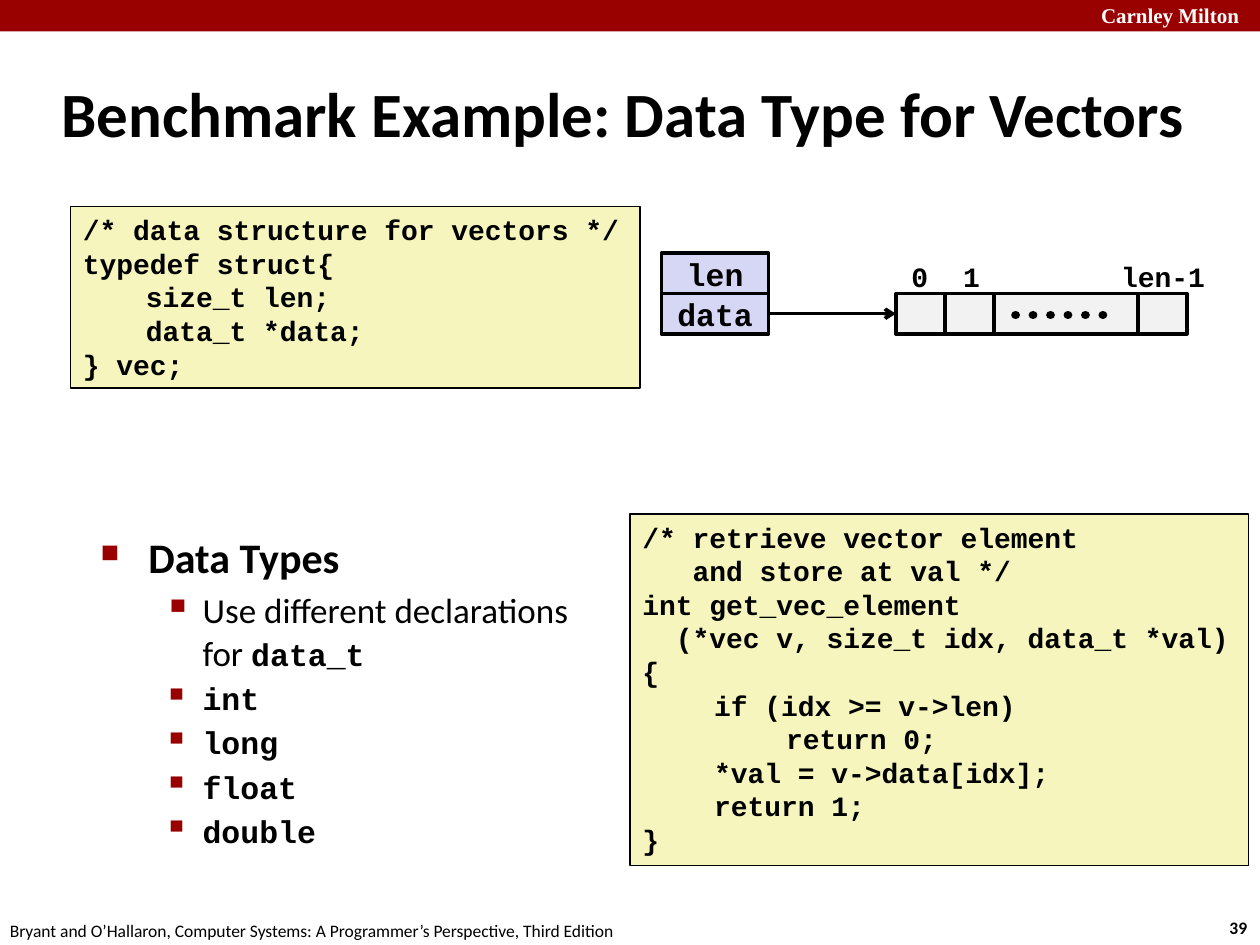
"""Build the slide on the vector data type of the benchmark example."""
from lxml import etree
from pptx import Presentation
from pptx import util as u
from pptx.dml.color import RGBColor
from pptx.enum import dml, shapes, text
from pptx.oxml.ns import qn

RED = RGBColor(0x99, 0x00, 0x00)
BLACK = RGBColor(0x00, 0x00, 0x00)
WHITE = RGBColor(0xFF, 0xFF, 0xFF)
CREAM = RGBColor(0xF6, 0xF5, 0xBD)
LILAC = RGBColor(0xD6, 0xD6, 0xF5)
GRAY = RGBColor(0xF2, 0xF2, 0xF2)
SANS, MONO, SERIF = "Calibri", "Courier New", "Times New Roman"
CENTER = text.PP_ALIGN.CENTER
MIDDLE = text.MSO_ANCHOR.MIDDLE

CELL_TOP, CELL_HEIGHT = 2.33, 0.32

STRUCT_CODE = """/* data structure for vectors */
typedef struct{
\tsize_t len;
\tdata_t *data;
} vec;"""

GETTER_CODE = """/* retrieve vector element
   and store at val */
int get_vec_element
  (*vec v, size_t idx, data_t *val)
{
\tif (idx >= v->len)
\t\treturn 0;
\t*val = v->data[idx];
\treturn 1;
}"""


def add_span(para, words, size, font=SANS, color=BLACK, bold=False):
    span = para.add_run()
    span.text = words
    span.font.size = u.Pt(size)
    span.font.name = font
    span.font.color.rgb = color
    span.font.bold = bold


def write(box, words, align=text.PP_ALIGN.LEFT, anchor=text.MSO_ANCHOR.TOP, **style):
    frame = box.text_frame
    frame.word_wrap = True
    frame.vertical_anchor = anchor
    for index, line in enumerate(words.split("\n")):
        para = frame.add_paragraph() if index else frame.paragraphs[0]
        para.alignment = align
        add_span(para, line, **style)


def add_label(page, words, left, top, width, height, **style):
    box = page.shapes.add_textbox(*map(u.Inches, (left, top, width, height)))
    write(box, words, **style)


def add_rect(page, left, top, width, height, fill, line=None):
    rect = page.shapes.add_shape(
        shapes.MSO_SHAPE.RECTANGLE, *map(u.Inches, (left, top, width, height)))
    rect.shadow.inherit = False
    rect.fill.solid()
    rect.fill.fore_color.rgb = fill
    if line:
        rect.line.color.rgb = BLACK
        rect.line.width = u.Pt(line)
    else:
        rect.line.fill.background()
    return rect


def add_code(page, code, left, top, width, height, tab):
    box = add_rect(page, left, top, width, height, CREAM, 1)
    write(box, code, size=16, font=MONO, bold=True)
    for para in box.text_frame.paragraphs:
        stops = etree.SubElement(para._p.get_or_add_pPr(), qn("a:tabLst"))
        for count in (1, 2):
            etree.SubElement(stops, qn("a:tab"), pos=str(u.Inches(tab * count)), algn="l")


def add_line(page, start, end, width):
    line = page.shapes.add_connector(
        shapes.MSO_CONNECTOR.STRAIGHT, *map(u.Inches, (*start, *end)))
    line.line.color.rgb = BLACK
    line.line.width = u.Pt(width)
    etree.SubElement(line._element.spPr, qn("a:effectLst"))
    return line


def add_arrow(page, source, target):
    arrow = add_line(page, (6.1, 2.49), (7.11, 2.49), 2)
    arrow.begin_connect(source, 3)
    arrow.end_connect(target, 1)
    etree.SubElement(arrow.line._get_or_add_ln(), qn("a:tailEnd"), type="arrow")


def add_dots(page, start, end):
    dots = add_line(page, start, end, 5)
    dots.line.dash_style = dml.MSO_LINE.ROUND_DOT
    dots.line._get_or_add_ln().set("cap", "rnd")


def add_bullet(para, mark, percent, margin, hang):
    props = para._p.get_or_add_pPr()
    props.set("marL", str(u.Inches(margin)))
    props.set("indent", str(u.Inches(-hang)))
    before = etree.SubElement(props, qn("a:spcBef"))
    etree.SubElement(before, qn("a:spcPct"), val="20000")
    color = etree.SubElement(props, qn("a:buClr"))
    etree.SubElement(color, qn("a:srgbClr"), val=str(RED))
    etree.SubElement(props, qn("a:buSzPct"), val=str(percent * 1000))
    etree.SubElement(props, qn("a:buChar"), char=mark)


def add_type_list(page):
    box = page.shapes.add_textbox(*map(u.Inches, (0.7, 4.17, 4.23, 2.43)))
    frame = box.text_frame
    frame.word_wrap = True
    heading = frame.paragraphs[0]
    add_bullet(heading, "■", 60, 0.38, 0.38)
    add_span(heading, "Data Types", 24, bold=True)
    items = [("Use different declarations for ", "data_t")]
    items += [("", name) for name in ("int", "long", "float", "double")]
    for lead, name in items:
        para = frame.add_paragraph()
        para.level = 1
        add_bullet(para, "▪", 110, 0.81, 0.31)
        if lead:
            add_span(para, lead, 20)
        add_span(para, name, 18, font=MONO, bold=True)


def add_vector(page):
    fields = []
    for row, name in enumerate(("len", "data")):
        top = CELL_TOP + (row - 1) * CELL_HEIGHT
        field = add_rect(page, 5.25, top, 0.85, CELL_HEIGHT, LILAC, 2)
        write(field, name, align=CENTER, anchor=MIDDLE, size=18, font=MONO, bold=True)
        fields.append(field)
    left, cells = 7.11, []
    for width in (0.39, 0.39, 1.14, 0.39):
        cells.append(add_rect(page, left, CELL_TOP, width, CELL_HEIGHT, GRAY, 2))
        left += width
    add_arrow(page, fields[1], cells[0])
    for name, left, width in (("0", 7.13, 0.34), ("1", 7.54, 0.34), ("len-1", 8.79, 0.88)):
        add_label(page, name, left, 2.01, width, 0.37,
                  align=CENTER, size=16, font=MONO, bold=True)
    add_dots(page, (8.06, 2.5), (8.86, 2.5))


def add_frame(page):
    add_rect(page, 0, 0, 10, 0.25, RED)
    add_label(page, "Carnley Milton", 8.64, -0.03, 1.43, 0.3,
              size=12, font=SERIF, color=WHITE, bold=True)
    add_label(page, "39", 9.66, 7.23, 0.37, 0.27, size=10, bold=True)
    add_label(page, "Bryant and O’Hallaron, Computer Systems: "
              "A Programmer’s Perspective, Third Edition", -0.02, 7.25, 5.08, 0.27, size=10)


def main():
    deck = Presentation()
    deck.slide_width, deck.slide_height = u.Inches(10), u.Inches(7.5)
    page = deck.slides.add_slide(deck.slide_layouts[6])
    add_frame(page)
    add_label(page, "Benchmark Example: Data Type for Vectors", 0.39, 0.48, 9.44, 0.83,
              anchor=MIDDLE, size=36, bold=True)
    add_code(page, STRUCT_CODE, 0.56, 1.64, 4.52, 1.44, tab=0.5)
    add_code(page, GETTER_CODE, 5, 4.08, 4.91, 2.79, tab=0.57)
    add_vector(page)
    add_type_list(page)
    deck.save("out.pptx")


if __name__ == "__main__":
    main()
